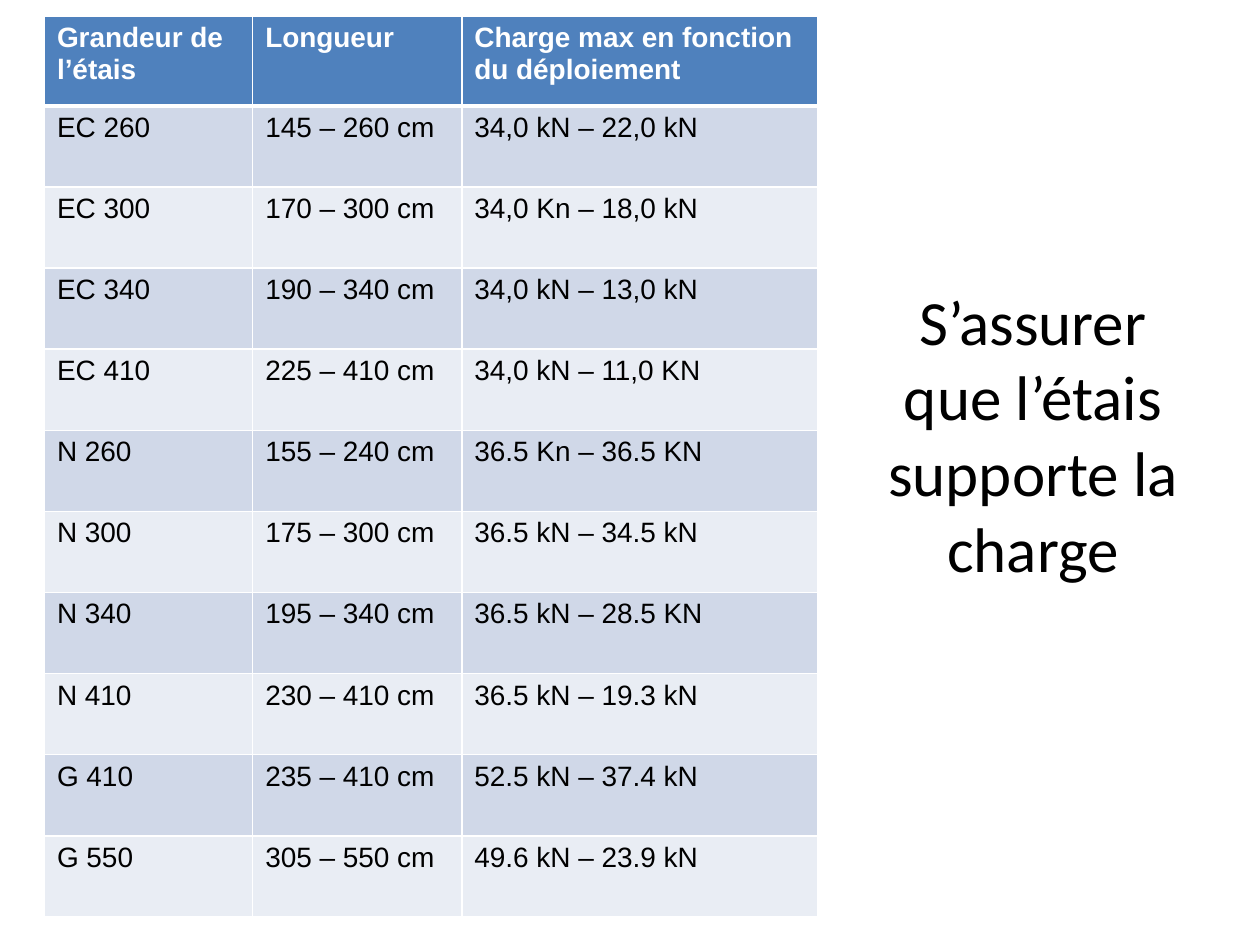
from dataclasses import dataclass

from lxml import etree
from pptx import Presentation
from pptx import util as u
from pptx.dml import color
from pptx.enum import text
from pptx.oxml import ns


@dataclass(frozen=True)
class Theme:
    header_fill: str = "4F81BD"
    band_fills: tuple = ("D0D8E8", "E9EDF4")
    light: str = "FFFFFF"
    dark: str = "000000"
    title_font: str = "Calibri"
    table_font: str = "Arial"
    title_size: int = 36
    table_size: int = 16
    thin_line: int = 1
    thick_line: int = 3


THEME = Theme()

HEADERS = ("Grandeur de l’étais", "Longueur",
           "Charge max en fonction du déploiement")
PROPS = (
    ("EC 260", "145 – 260 cm", "34,0 kN – 22,0 kN"),
    ("EC 300", "170 – 300 cm", "34,0 Kn – 18,0 kN"),
    ("EC 340", "190 – 340 cm", "34,0 kN – 13,0 kN"),
    ("EC 410", "225 – 410 cm", "34,0 kN – 11,0 KN"),
    ("N 260", "155 – 240 cm", "36.5 Kn – 36.5 KN"),
    ("N 300", "175 – 300 cm", "36.5 kN – 34.5 kN"),
    ("N 340", "195 – 340 cm", "36.5 kN – 28.5 KN"),
    ("N 410", "230 – 410 cm", "36.5 kN – 19.3 kN"),
    ("G 410", "235 – 410 cm", "52.5 kN – 37.4 kN"),
    ("G 550", "305 – 550 cm", "49.6 kN – 23.9 kN"),
)
COLUMN_WIDTHS = (119, 119.5, 203.5)
HEADER_HEIGHT = 51.1
ROW_HEIGHT = 46.37


def add_run(paragraph, words, font, size, rgb, bold=False):
    run = paragraph.add_run()
    run.text = words
    run.font.name = font
    run.font.size = u.Pt(size)
    run.font.bold = bold
    run.font.color.rgb = color.RGBColor.from_string(rgb)


def add_title(slide, words, left, top, width, height):
    shape = slide.shapes.add_textbox(
        u.Pt(left), u.Pt(top), u.Pt(width), u.Pt(height))
    frame = shape.text_frame
    frame.word_wrap = True
    frame.vertical_anchor = text.MSO_ANCHOR.MIDDLE
    paragraph = frame.paragraphs[0]
    paragraph.alignment = text.PP_ALIGN.CENTER
    add_run(paragraph, words, THEME.title_font, THEME.title_size, THEME.dark)


def add_borders(cell, widths):
    """Draw the left, right, top and bottom borders, in that order."""
    properties = cell._tc.get_or_add_tcPr()
    for side, width in zip("LRTB", widths):
        line = etree.SubElement(properties, ns.qn(f"a:ln{side}"),
                                w=str(u.Pt(width)))
        fill = etree.SubElement(line, ns.qn("a:solidFill"))
        etree.SubElement(fill, ns.qn("a:srgbClr"), val=THEME.light)


def fill_cell(cell, words, row_number):
    is_header = row_number == 0
    thin, thick = THEME.thin_line, THEME.thick_line
    # Borders come before the fill in the cell properties
    add_borders(cell, (thin, thin,
                       thick if row_number == 1 else thin,
                       thick if is_header else thin))
    background = (THEME.header_fill if is_header
                  else THEME.band_fills[(row_number - 1) % 2])
    cell.fill.solid()
    cell.fill.fore_color.rgb = color.RGBColor.from_string(background)
    add_run(cell.text_frame.paragraphs[0], words, THEME.table_font,
            THEME.table_size, THEME.light if is_header else THEME.dark,
            bold=is_header)


def add_load_table(slide, left, top):
    rows = (HEADERS, *PROPS)
    heights = [HEADER_HEIGHT] + [ROW_HEIGHT] * len(PROPS)
    table = slide.shapes.add_table(
        len(rows), len(HEADERS), u.Pt(left), u.Pt(top),
        u.Pt(sum(COLUMN_WIDTHS)), u.Pt(sum(heights))).table
    for column, width in zip(table.columns, COLUMN_WIDTHS):
        column.width = u.Pt(width)
    for row_number, (words_in_row, height) in enumerate(zip(rows, heights)):
        table.rows[row_number].height = u.Pt(height)
        for column_number, words in enumerate(words_in_row):
            fill_cell(table.cell(row_number, column_number), words, row_number)


def main():
    presentation = Presentation()
    presentation.slide_width = u.Pt(720)
    presentation.slide_height = u.Pt(540)
    slide = presentation.slides.add_slide(presentation.slide_layouts[6])

    # Message on the right
    add_title(slide, "S’assurer que l’étais supporte la charge",
              left=496, top=9.4, width=188.6, height=476.6)
    # Prop sizes and permitted loads on the left
    add_load_table(slide, left=25.4, top=9.4)

    presentation.save("out.pptx")


if __name__ == "__main__":
    main()
